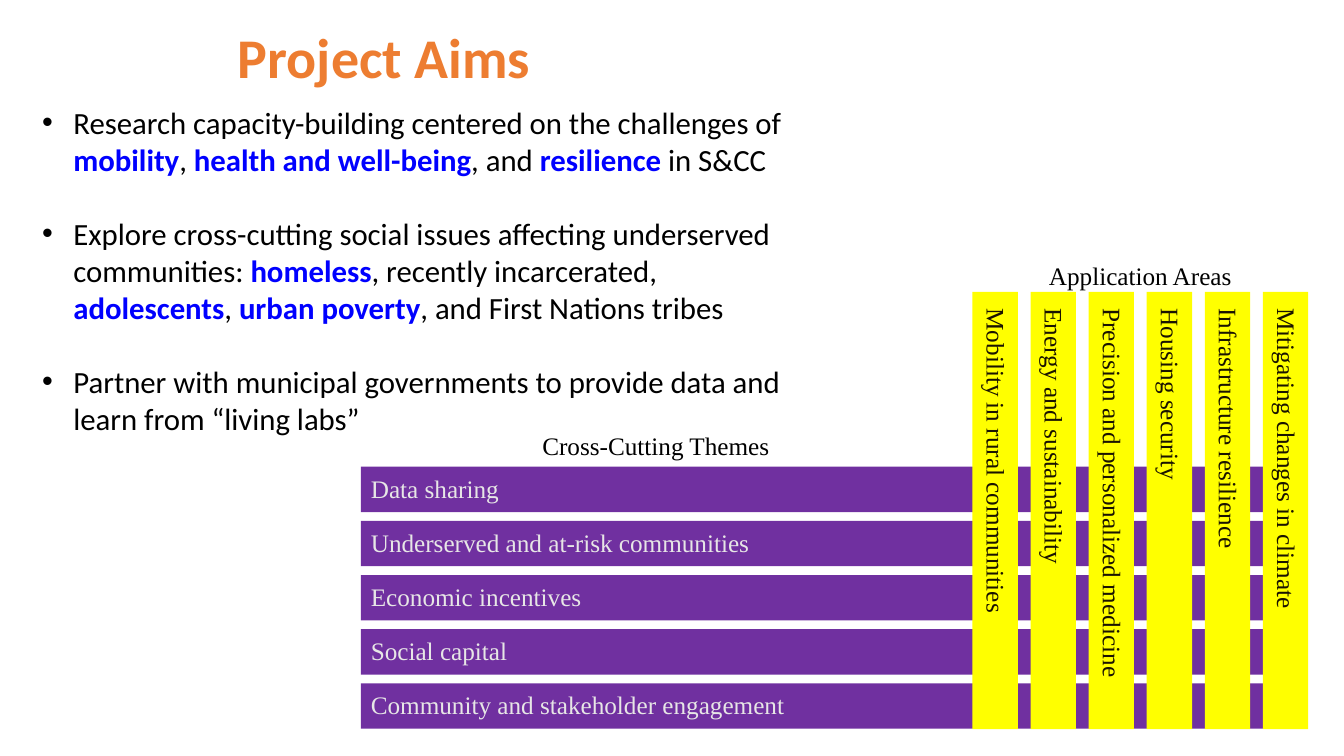
from dataclasses import dataclass

from lxml import etree
from pptx import Presentation
from pptx.dml.color import RGBColor
from pptx.enum.shapes import MSO_SHAPE
from pptx.enum.text import MSO_ANCHOR, MSO_AUTO_SIZE, PP_ALIGN
from pptx.oxml.ns import qn
from pptx.util import Inches, Pt

RECTANGLE = MSO_SHAPE.RECTANGLE
TOP, MIDDLE = MSO_ANCHOR.TOP, MSO_ANCHOR.MIDDLE
LEFT, CENTER = PP_ALIGN.LEFT, PP_ALIGN.CENTER
NO_AUTO_SIZE = MSO_AUTO_SIZE.NONE

SLIDE_WIDTH, SLIDE_HEIGHT = Inches(13.33), Inches(7.5)
GRID_ROWS = 90
CELL = SLIDE_HEIGHT / GRID_ROWS
TITLE_ONLY = 5
BAR = 5.4
LABEL_HEIGHT = 4.85


@dataclass(frozen=True)
class Theme:
    heading_font: str = "Calibri"
    diagram_font: str = "Times New Roman"
    title_size: float = 40
    bullet_size: float = 22
    bullet_gap: float = 26.5
    label_size: float = 18
    title: str = "ED7D31"
    text: str = "000000"
    emphasis: str = "0000FF"
    theme_bar: str = "7030A0"
    theme_label: str = "E7E6E6"
    area_bar: str = "FFFF00"
    area_label: str = "1A1300"


THEME = Theme()


@dataclass(frozen=True)
class Box:
    left: float
    top: float
    width: float
    height: float

    def place(self):
        return [round(value * CELL) for value in (self.left, self.top, self.width, self.height)]

    def turned(self):
        shift = (self.width - self.height) / 2
        return Box(self.left + shift, self.top - shift, self.height, self.width)


TITLE_BOX = Box(27.12, 1.68, 105.24, 9.96)
BULLET_BOX = Box(3.84, 11.76, 90.72, 45.6)
THEMES_BOX = Box(42.96, 55.56, 112.7, 31.2)
AREAS_BOX = Box(115.74, 34.74, 39.96, 52.06)

BULLETS = [
    "Research capacity-building centered on the challenges of *mobility*, "
    "*health and well-being*, and *resilience* in S&CC",
    "Explore cross-cutting social issues affecting underserved communities: *homeless*, "
    "recently incarcerated, *adolescents*, *urban poverty*, and First Nations tribes",
    "Partner with municipal governments to provide data and learn from “living labs”",
]
THEMES = [
    "Data sharing",
    "Underserved and at-risk communities",
    "Economic incentives",
    "Social capital",
    "Community and stakeholder engagement",
]
AREAS = [
    "Mobility in rural communities",
    "Energy and sustainability",
    "Precision and personalized medicine",
    "Housing security",
    "Infrastructure resilience",
    "Mitigating changes in climate",
]


def add_run(paragraph, text, *, font, size, color, bold=False):
    run = paragraph.add_run()
    run.text = text
    run.font.name = font
    run.font.size = Pt(size)
    run.font.bold = bold
    run.font.color.rgb = RGBColor.from_string(color)


def add_label(slide, box, text, *, color, align=LEFT, rotation=0):
    shape = slide.shapes.add_textbox(*box.place())
    shape.rotation = rotation
    shape.text_frame.word_wrap = True
    paragraph = shape.text_frame.paragraphs[0]
    paragraph.alignment = align
    add_run(paragraph, text, font=THEME.diagram_font, size=THEME.label_size, color=color)


def add_bar(slide, box, color, rotation=0):
    shape = slide.shapes.add_shape(RECTANGLE, *box.place())
    shape.rotation = rotation
    shape.shadow.inherit = False
    shape.fill.solid()
    shape.fill.fore_color.rgb = RGBColor.from_string(color)
    shape.line.fill.background()


def add_title(slide, box, text):
    title = slide.shapes.title
    title.left, title.top, title.width, title.height = box.place()
    frame = title.text_frame
    frame.auto_size = NO_AUTO_SIZE
    frame.vertical_anchor = MIDDLE
    paragraph = frame.paragraphs[0]
    paragraph.alignment = LEFT
    add_run(paragraph, text, font=THEME.heading_font, size=THEME.title_size,
            color=THEME.title, bold=True)


def set_bullet(paragraph, indent):
    properties = paragraph._p.get_or_add_pPr()
    properties.set("marL", str(indent))
    properties.set("indent", str(-indent))
    etree.SubElement(properties, qn("a:buFont"), typeface="Arial")
    etree.SubElement(properties, qn("a:buChar"), char="•")


def add_bullets(slide, box, bullets):
    frame = slide.shapes.add_textbox(*box.place()).text_frame
    frame.word_wrap = True
    frame.vertical_anchor = TOP
    for index, bullet in enumerate(bullets):
        paragraph = frame.add_paragraph() if index else frame.paragraphs[0]
        set_bullet(paragraph, Inches(0.31))
        if index:
            paragraph.space_before = Pt(THEME.bullet_gap)
        for part, text in enumerate(bullet.split("*")):
            emphasized = part % 2 == 1
            add_run(paragraph, text, font=THEME.heading_font, size=THEME.bullet_size,
                    color=THEME.emphasis if emphasized else THEME.text, bold=emphasized)


def add_themes(slide, box, caption, themes):
    pitch = (box.height - BAR) / (len(themes) - 1)
    for index, theme in enumerate(themes):
        top = box.top + index * pitch
        add_bar(slide, Box(box.left, top, box.width, BAR), THEME.theme_bar)
        add_label(slide, Box(box.left, top + 0.15, 58.3, LABEL_HEIGHT), theme,
                  color=THEME.theme_label)
    add_label(slide, Box(box.left, box.top - 4.92, 70.2, LABEL_HEIGHT), caption,
              color=THEME.text, align=CENTER)


def add_areas(slide, box, caption, areas):
    pitch = (box.width - BAR) / (len(areas) - 1)
    label_inset = (BAR - LABEL_HEIGHT) / 2
    for index, area in enumerate(areas):
        left = box.left + index * pitch
        bar = Box(left, box.top, BAR, box.height)
        label = Box(left + label_inset + 0.15, box.top + 0.8, LABEL_HEIGHT, box.height - 0.8)
        add_bar(slide, bar.turned(), THEME.area_bar, rotation=90)
        add_label(slide, label.turned(), area, color=THEME.area_label, rotation=90)
    add_label(slide, Box(box.left, box.top - 4.4, box.width, LABEL_HEIGHT), caption,
              color=THEME.text, align=CENTER)


def main():
    presentation = Presentation()
    presentation.slide_width, presentation.slide_height = SLIDE_WIDTH, SLIDE_HEIGHT
    slide = presentation.slides.add_slide(presentation.slide_layouts[TITLE_ONLY])
    add_title(slide, TITLE_BOX, "Project Aims")
    add_bullets(slide, BULLET_BOX, BULLETS)
    add_themes(slide, THEMES_BOX, "Cross-Cutting Themes", THEMES)
    add_areas(slide, AREAS_BOX, "Application Areas", AREAS)
    presentation.save("out.pptx")


if __name__ == "__main__":
    main()
